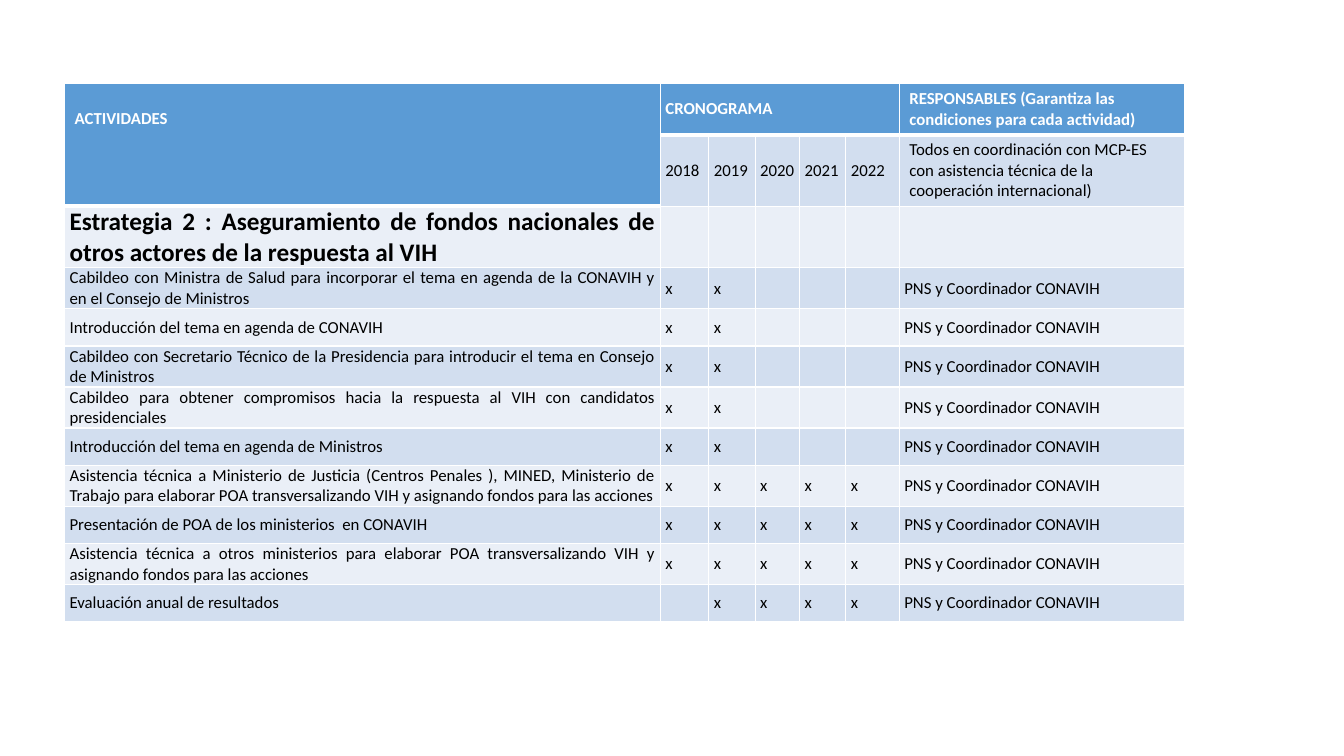
from dataclasses import dataclass

from lxml import etree
from pptx import Presentation
from pptx import util as u
from pptx.dml.color import RGBColor
from pptx.enum import text
from pptx.oxml.ns import qn


@dataclass(frozen=True)
class Theme:
    """Colours, font and type sizes of the slide."""
    font: str = "Calibri"
    header: str = "5B9BD5"
    bands: tuple = ("EAEFF7", "D2DEEF")
    white: str = "FFFFFF"
    black: str = "000000"
    body: int = 12
    strategy: int = 18
    rule: int = 1
    header_rule: int = 3


class Schedule:
    """Draws the activity schedule on one slide."""

    def __init__(self, slide, theme):
        """Keep the slide and its style."""
        self.slide, self.theme = slide, theme

    def table(self, left, top, widths, heights):
        """Add an empty table with the given column widths and row heights."""
        frame = self.slide.shapes.add_table(
            len(heights), len(widths), u.Inches(left), u.Inches(top),
            u.Inches(sum(widths)), u.Inches(sum(heights)))
        grid = frame.table
        for column, width in zip(grid.columns, widths):
            column.width = u.Inches(width)
        for row, height in zip(grid.rows, heights):
            row.height = u.Inches(height)
        return grid

    def border(self, cell, sides, bottom):
        """Rule the named sides of a cell in white."""
        for side in sides:
            points = bottom if side == "B" else self.theme.rule
            line = etree.SubElement(cell._tc.get_or_add_tcPr(), qn(f"a:ln{side}"),
                                    w=str(u.Pt(points)))
            solid = etree.SubElement(line, qn("a:solidFill"))
            etree.SubElement(solid, qn("a:srgbClr"), val=self.theme.white)

    def paint(self, cell, color, sides="LRB", bottom=None):
        """Fill and rule a cell, with tight margins."""
        self.border(cell, sides, bottom or self.theme.rule)
        cell.fill.solid()
        cell.fill.fore_color.rgb = RGBColor.from_string(color)
        cell.vertical_anchor = text.MSO_ANCHOR.MIDDLE
        cell.margin_left = cell.margin_right = u.Inches(0.05)
        cell.margin_top = cell.margin_bottom = 0

    def label(self, cell, words, size=None, bold=False, color=None, justify=True):
        """Put one run of words into a cell."""
        paragraph = cell.text_frame.paragraphs[0]
        paragraph.alignment = text.PP_ALIGN.JUSTIFY if justify else text.PP_ALIGN.LEFT
        run = paragraph.add_run()
        run.text = words
        run.font.name = self.theme.font
        run.font.size = u.Pt(size or self.theme.body)
        run.font.bold = bold
        run.font.color.rgb = RGBColor.from_string(color or self.theme.black)

    def pad(self, cell, top=0.05):
        """Give a cell wide margins and hang its text from the top."""
        cell.vertical_anchor = text.MSO_ANCHOR.TOP
        cell.margin_left = cell.margin_right = u.Inches(0.1)
        cell.margin_top, cell.margin_bottom = u.Inches(top), u.Inches(0.05)


YEARS = range(2018, 2023)
OWNER = "PNS y Coordinador CONAVIH"
STRATEGY = ("Estrategia 2 : Aseguramiento de fondos nacionales de otros actores "
            "de la respuesta al VIH")
HEADINGS = {0: "ACTIVIDADES", 1: "CRONOGRAMA",
            6: "RESPONSABLES (Garantiza las condiciones para cada actividad)"}
COORDINATION = ("Todos en coordinación con MCP-ES con asistencia técnica de la "
                "cooperación internacional)")
ACTIVITIES = [
    ("Cabildeo con Ministra de Salud para incorporar el tema en agenda de la CONAVIH "
     "y en el Consejo de Ministros", 2018, 2019),
    ("Introducción del tema en agenda de CONAVIH", 2018, 2019),
    ("Cabildeo con Secretario Técnico de la Presidencia para introducir el tema en "
     "Consejo de Ministros", 2018, 2019),
    ("Cabildeo para obtener compromisos hacia la respuesta al VIH con candidatos "
     "presidenciales", 2018, 2019),
    ("Introducción del tema en agenda de Ministros", 2018, 2019),
    ("Asistencia técnica a Ministerio de Justicia (Centros Penales ), MINED, Ministerio "
     "de Trabajo para elaborar POA transversalizando VIH y asignando fondos para las "
     "acciones", 2018, 2022),
    ("Presentación de POA de los ministerios  en CONAVIH", 2018, 2022),
    ("Asistencia técnica a otros ministerios para elaborar POA transversalizando VIH y "
     "asignando fondos para las acciones", 2018, 2022),
    ("Evaluación anual de resultados", 2019, 2022),
]


def main():
    """Build the slide and save it."""
    deck = Presentation()
    deck.slide_width, deck.slide_height = u.Inches(13.33), u.Inches(7.5)
    theme = Theme()
    schedule = Schedule(deck.slides.add_slide(deck.slide_layouts[6]), theme)
    grid = schedule.table(0.64, 0.83, [5.91, 0.48, 0.46, 0.44, 0.46, 0.53, 2.83],
                          [0.37, 0.33] + [0.37] * (len(ACTIVITIES) + 1))

    for row in range(len(grid.rows)):
        for column in range(len(grid.columns)):
            heading = row == 0 or (row == 1 and column == 0)
            schedule.paint(grid.cell(row, column),
                           theme.header if heading else theme.bands[row % 2],
                           "LRTB" if row == 0 else "LRB",
                           theme.header_rule if heading else theme.rule)

    grid.cell(0, 0).merge(grid.cell(1, 0))
    grid.cell(0, 1).merge(grid.cell(0, len(YEARS)))
    for column, heading in HEADINGS.items():
        schedule.label(grid.cell(0, column), heading, bold=True, color=theme.white,
                       justify=False)
    schedule.pad(grid.cell(0, 0), top=0.25)
    for row in (0, 1):
        schedule.pad(grid.cell(row, 6))
    for column, year in enumerate(YEARS, 1):
        schedule.label(grid.cell(1, column), str(year))
    schedule.label(grid.cell(1, 6), COORDINATION, justify=False)
    schedule.label(grid.cell(2, 0), STRATEGY, size=theme.strategy, bold=True)

    for row, (activity, first, last) in enumerate(ACTIVITIES, 3):
        schedule.label(grid.cell(row, 0), activity)
        for column, year in enumerate(YEARS, 1):
            if first <= year <= last:
                schedule.label(grid.cell(row, column), "x")
        schedule.label(grid.cell(row, 6), OWNER)

    deck.save("out.pptx")


if __name__ == "__main__":
    main()
